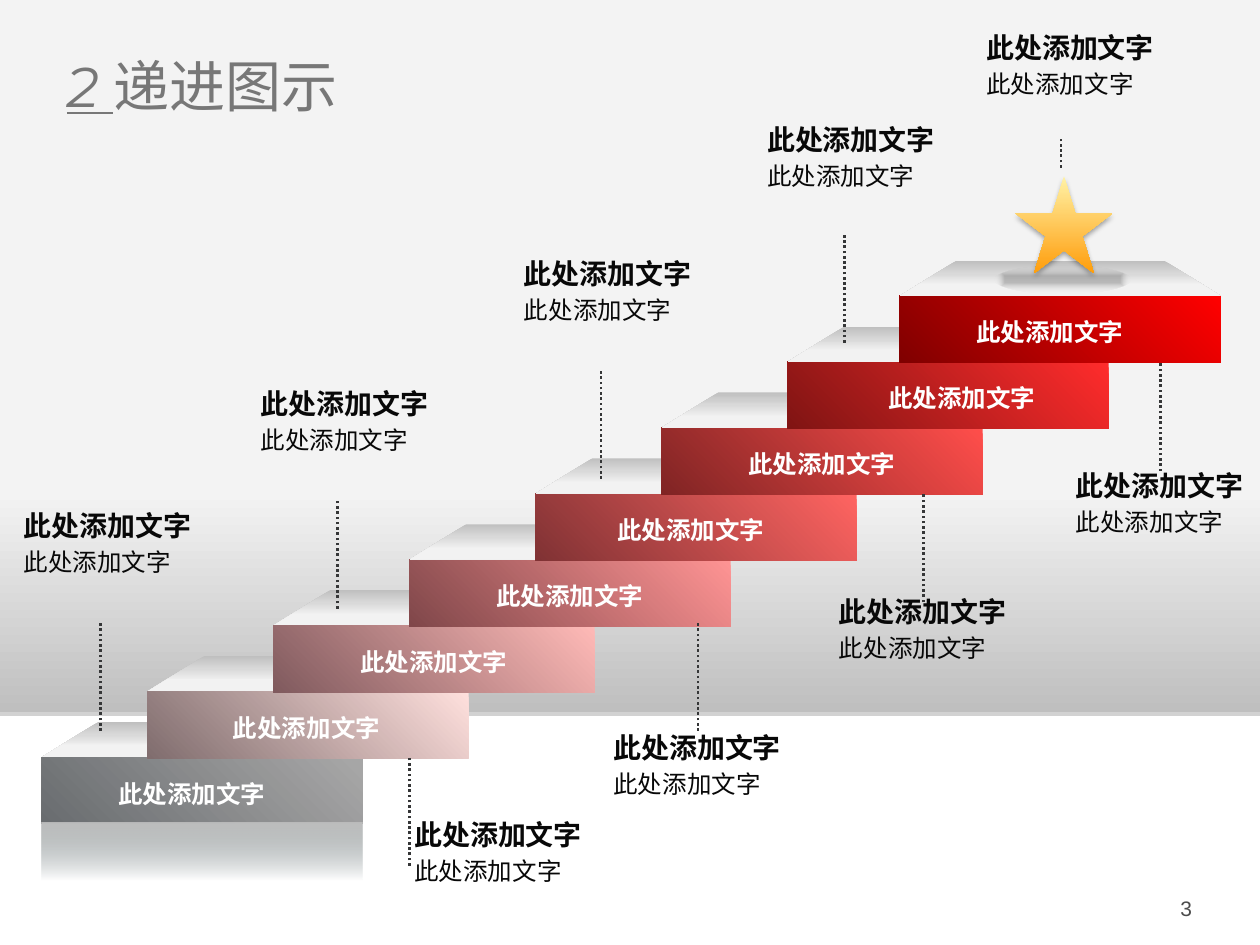
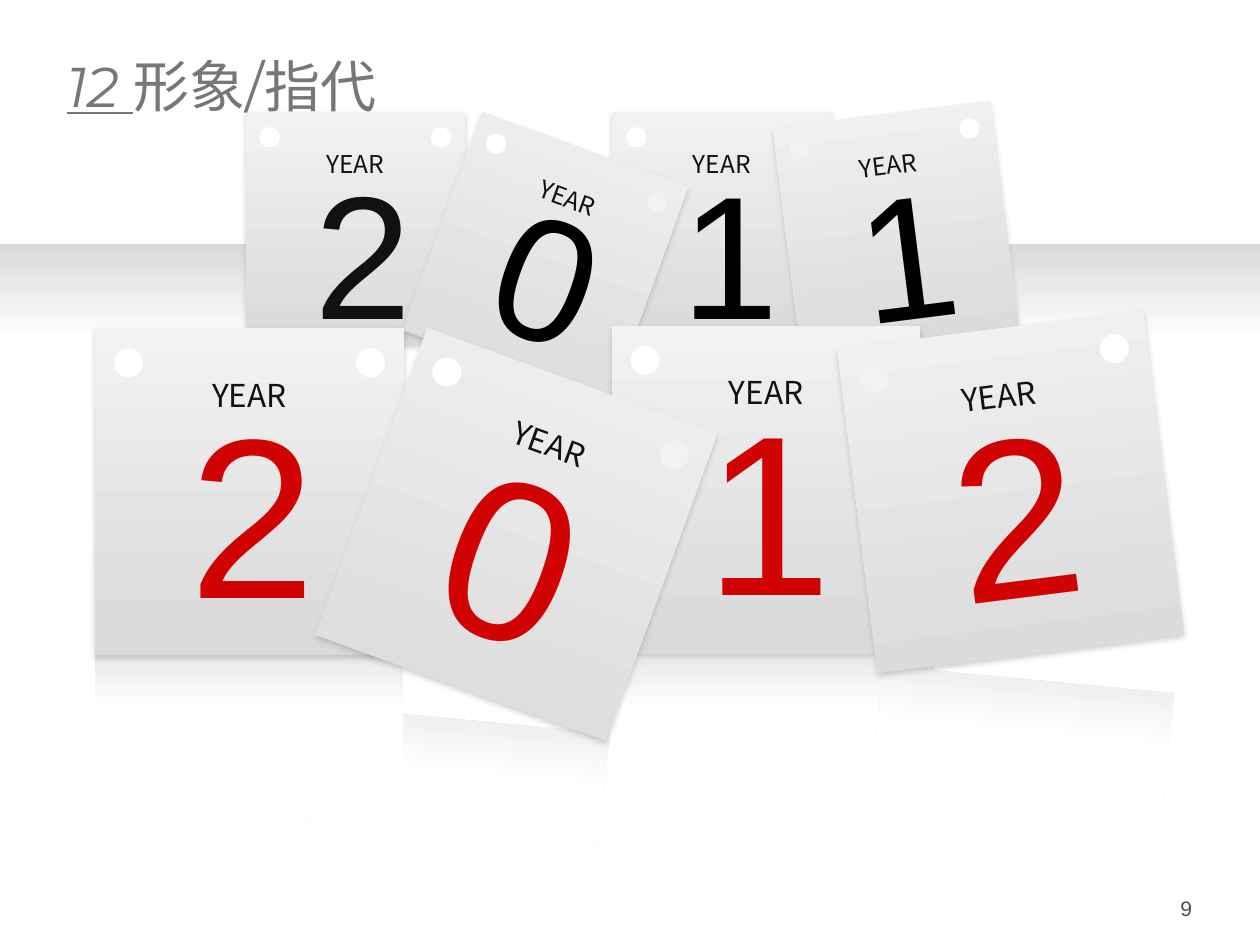
"""Build two diagram slides: a rising staircase and two rows of calendar cards."""
from math import cos, radians, sin

from lxml import etree
from pptx import Presentation
from pptx.dml.color import RGBColor
from pptx.enum.dml import MSO_LINE
from pptx.enum.shapes import MSO_CONNECTOR, MSO_SHAPE
from pptx.enum.text import MSO_ANCHOR, MSO_AUTO_SIZE, PP_ALIGN
from pptx.oxml import parse_xml
from pptx.oxml.ns import nsdecls, qn
from pptx.util import Inches, Pt

RECTANGLE = MSO_SHAPE.RECTANGLE
TRAPEZOID = MSO_SHAPE.TRAPEZOID
ELLIPSE = MSO_SHAPE.OVAL
STAR = MSO_SHAPE.STAR_5_POINT
STRAIGHT = MSO_CONNECTOR.STRAIGHT
DOTTED = MSO_LINE.ROUND_DOT
MIDDLE = MSO_ANCHOR.MIDDLE
TOP = MSO_ANCHOR.TOP
GROW = MSO_AUTO_SIZE.SHAPE_TO_FIT_TEXT
FIXED = MSO_AUTO_SIZE.NONE
LEFT, CENTER, RIGHT = PP_ALIGN.LEFT, PP_ALIGN.CENTER, PP_ALIGN.RIGHT

CJK_FONT, TITLE_FONT, DIGIT_FONT = "Noto Sans CJK SC", "Montserrat", "Arial"
WHITE = RGBColor(0xFF, 0xFF, 0xFF)
PALE = RGBColor(0xF2, 0xF2, 0xF2)
TITLE_GRAY = RGBColor(0x77, 0x77, 0x77)
NUMBER_GRAY = RGBColor(0x4C, 0x4C, 0x4C)
LEADER_GRAY = RGBColor(0x35, 0x36, 0x37)
INK = RGBColor(0x08, 0x08, 0x08)
YEAR_INK = RGBColor(0x11, 0x11, 0x11)
BLACK = RGBColor(0, 0, 0)
RED = RGBColor(0xD0, 0x02, 0x02)

BACKDROP = [(0, "F3F3F3"), (69, "F3F3F3"), (100, "BFBFBF")]
TREAD = [(0, "BFBFBF"), (37, "D9D9D9"), (69, "F2F2F2")]
STEP_REFLECTION = [(0, "BFBFBF"), (86, "627274", 0)]
STAR_SHADE = [(24, "000000", 22), (100, "FFFFFF", 0)]
STAR_GOLD = [(0, "FFF2A6"), (100, "FF9D0C")]
BAND = [(0, "D9D9D9"), (37, "FFFFFF"), (100, "FFFFFF")]
CARD = [(0, "F2F2F2"), (100, "D9D9D9")]
CARD_REFLECTION = [(0, "E8E8E8"), (49, "FFFFFF")]


def add_panel(page, kind, place, fill, angle=90, shadow=None, rotation=0):
    """Add a borderless shape; fill is a colour or a list of gradient stops, angle None is a glow."""
    shape = page.shapes.add_shape(kind, *map(Inches, place))
    shape.rotation = rotation
    shape.shadow.inherit = False
    shape.line.fill.background()
    properties = shape.element.spPr
    if isinstance(fill, RGBColor):
        shape.fill.solid()
        shape.fill.fore_color.rgb = fill
    else:
        shape.fill.background()
        stops = "".join(
            f'<a:gs pos="{position * 1000}"><a:srgbClr val="{color}">'
            f'<a:alpha val="{(alpha or [100])[0] * 1000}"/></a:srgbClr></a:gs>'
            for position, color, *alpha in fill
        )
        direction = f'<a:lin ang="{(angle or 0) * 60000}" scaled="0"/>'
        if angle is None:
            direction = ('<a:path path="shape"><a:fillToRect l="50000" t="50000" '
                         'r="50000" b="50000"/></a:path>')
        gradient = parse_xml(f'<a:gradFill {nsdecls("a")} rotWithShape="1">'
                             f'<a:gsLst>{stops}</a:gsLst>{direction}</a:gradFill>')
        properties.replace(properties.find(qn("a:noFill")), gradient)
    if shadow:
        color, alpha, blur, distance = shadow
        properties.find(qn("a:effectLst")).append(parse_xml(
            f'<a:outerShdw {nsdecls("a")} blurRad="{Pt(blur)}" dist="{Pt(distance)}" '
            f'dir="5400000" algn="t" rotWithShape="0"><a:srgbClr val="{color}">'
            f'<a:alpha val="{alpha * 1000}"/></a:srgbClr></a:outerShdw>'))
    return shape


def write_text(box, text, *, size, color, font=CJK_FONT, bold=False, italic=False,
               underline=False, align=LEFT, anchor=TOP, fit=GROW, before=0, same_line=False):
    """Write one formatted span, in a new paragraph unless same_line is set."""
    frame = box.text_frame
    frame.word_wrap = True
    frame.auto_size = fit
    frame.vertical_anchor = anchor
    para = frame.paragraphs[-1]
    if para.runs and not same_line:
        para = frame.add_paragraph()
    para.alignment = align
    if before:
        para.space_before = Pt(0)
        spacing = para._p.pPr.find(qn("a:spcBef"))
        spacing.remove(spacing[0])
        etree.SubElement(spacing, qn("a:spcPct")).set("val", str(before * 1000))
    span = para.add_run()
    span.text = text
    span.font.size = Pt(size)
    span.font.color.rgb = color
    span.font.bold = bold
    span.font.italic = italic
    span.font.underline = underline
    span.font.name = font
    etree.SubElement(span.font._element, qn("a:ea")).set("typeface", CJK_FONT)


deck = Presentation()
deck.slide_width, deck.slide_height = Inches(10), Inches(7.5)
title_only = deck.slide_layouts[5]
stairs_page = deck.slides.add_slide(title_only)
cards_page = deck.slides.add_slide(title_only)

add_panel(stairs_page, RECTANGLE, (0, 0, 10, 5.65), BACKDROP, shadow=("808080", 35, 0, 1.8))

STEP_WIDTH, STEP_HEIGHT, TREAD_HEIGHT, STEP_RISE = 2.55, 0.53, 0.28, 0.523
steps = [
    (0.33, 0.84, [(0, "A6A6A6"), (3, "A6A6A6"), (100, "696C6F")]),
    (1.17, 1.75, [(0, "FFE0DD"), (100, "806D6E")]),
    (2.17, 2.76, [(0, "FFBAB7"), (100, "805A5E")]),
    (3.25, 3.84, [(0, "FF9494"), (100, "80474A")]),
    (4.25, 4.8, [(0, "FF6461"), (100, "803234")]),
    (5.25, 5.84, [(0, "FF4E4B"), (100, "802424")]),
    (6.25, 6.95, [(0, "FF2C2C"), (100, "801413")]),
    (7.14, 7.65, [(0, "FF0000"), (100, "800000")]),
]
for index, (left, label_left, colors) in enumerate(steps):
    top = 6.01 - index * STEP_RISE
    add_panel(stairs_page, RECTANGLE, (left, top, STEP_WIDTH, STEP_HEIGHT), colors, angle=135)
    tread = add_panel(stairs_page, TRAPEZOID,
                      (left, top - TREAD_HEIGHT, STEP_WIDTH, TREAD_HEIGHT), TREAD)
    tread.adjustments[0] = 1.61
    label = stairs_page.shapes.add_textbox(
        Inches(label_left), Inches(top + 0.12), Inches(1.87), Inches(0.34))
    write_text(label, "此处添加文字", size=14, color=WHITE, bold=True)

add_panel(stairs_page, RECTANGLE, (0.33, 6.53, STEP_WIDTH, STEP_HEIGHT), STEP_REFLECTION)
add_panel(stairs_page, ELLIPSE, (7.89, 2.11, 1.08, 0.22), STAR_SHADE, angle=None)
add_panel(stairs_page, STAR, (8.06, 1.4, 0.77, 0.77), STAR_GOLD, shadow=("000000", 35, 3.1, 1.8))

callouts = [
    (0.09, 3.99, 0.8, 4.94, 5.8),
    (1.97, 3.02, 2.68, 3.96, 4.83),
    (4.06, 1.99, 4.77, 2.93, 3.8),
    (5.99, 0.92, 6.7, 1.86, 2.72),
    (7.73, 0.19, 8.42, 1.08, 1.33),
    (3.19, 6.44, 3.25, 6.01, 6.87),
    (4.77, 5.75, 5.54, 4.94, 5.8),
    (6.56, 4.67, 7.33, 3.91, 4.78),
    (8.44, 3.67, 9.21, 2.88, 3.74),
]
for left, top, leader_x, leader_top, leader_bottom in callouts:
    leader = stairs_page.shapes.add_connector(
        STRAIGHT, Inches(leader_x), Inches(leader_bottom), Inches(leader_x), Inches(leader_top))
    leader.line.color.rgb = LEADER_GRAY
    leader.line.width = Pt(1.5)
    leader.line.dash_style = DOTTED
    etree.SubElement(leader.element.spPr, qn("a:effectLst"))
    callout = stairs_page.shapes.add_textbox(
        Inches(left), Inches(top), Inches(1.58), Inches(0.65))
    write_text(callout, "此处添加文字", size=16, color=INK, bold=True, before=20)
    write_text(callout, "此处添加文字", size=14, color=INK, before=20)

add_panel(cards_page, RECTANGLE, (0, 1.94, 10, 2.03), BAND)
for left, top, width, tilt in [(2.48, 5.71, 2.32, 5.4), (4.96, 5.19, 2.45, 0),
                               (6.96, 5.39, 2.32, 5.4), (0.75, 5.19, 2.45, 0)]:
    add_panel(cards_page, RECTANGLE, (left, top, width, 0.91), CARD_REFLECTION, rotation=tilt)

back_row = {
    "card": (1.74, 1.84), "digit": (0.76, 1.78, 100), "year": (0.34, 14, -0.51),
    "hole": (0.16, 0.68, -0.72),
    "cards": [("1", 5.73, 1.81, 0, 0.18, BLACK), ("2", 2.82, 1.81, 0, 0.18, YEAR_INK),
              ("0", 4.33, 2.05, 20, 0.1, BLACK), ("1", 7.11, 1.82, -7.2, 0.18, BLACK)],
}
front_row = {
    "card": (2.45, 2.59), "digit": (1.07, 2.29, 130), "year": (0.41, 18, -0.76),
    "hole": (0.23, 0.96, -1.02),
    "cards": [("1", 6.08, 3.88, 0, 0.14, RED), ("2", 1.98, 3.9, 0, 0.14, RED),
              ("0", 4.1, 4.24, 20, 0.14, RED), ("2", 8.02, 3.9, -7.2, 0.14, RED)],
}
for row in (back_row, front_row):
    card_width, card_height = row["card"]
    digit_width, digit_height, digit_size = row["digit"]
    year_height, year_size, year_y = row["year"]
    hole_size, hole_x, hole_y = row["hole"]
    for digit, center_x, center_y, tilt, digit_y, digit_color in row["cards"]:
        parts = [
            ("card", 0, 0, card_width, card_height),
            ("digit", -0.04, digit_y, digit_width, digit_height),
            ("left hole", -hole_x, hole_y, hole_size, hole_size),
            ("right hole", hole_x, hole_y, hole_size, hole_size),
            ("year", 0, year_y, card_width, year_height),
        ]
        turn = radians(tilt)
        for part, x, y, width, height in parts:
            place = (center_x + x * cos(turn) - y * sin(turn) - width / 2,
                     center_y + x * sin(turn) + y * cos(turn) - height / 2, width, height)
            if part == "card":
                add_panel(cards_page, RECTANGLE, place, CARD,
                          shadow=("808080", 35, 3.1, 1.8), rotation=tilt)
            elif part.endswith("hole"):
                shaded = tilt * x > 0
                add_panel(cards_page, ELLIPSE, place, PALE if shaded else WHITE, rotation=tilt)
            else:
                box = cards_page.shapes.add_textbox(*map(Inches, place))
                box.rotation = tilt
                if part == "digit":
                    write_text(box, digit, size=digit_size, color=digit_color, font=DIGIT_FONT)
                else:
                    write_text(box, "YEAR", size=year_size, color=YEAR_INK, align=CENTER)

for page, section, heading, number in [(stairs_page, "2 ", "递进图示", "3"),
                                       (cards_page, "12 ", "形象/指代", "9")]:
    title = page.shapes.title
    title.left, title.top, title.width, title.height = map(Inches, (0.43, 0.28, 9.14, 0.79))
    title_format = {"size": 32, "color": TITLE_GRAY, "font": TITLE_FONT,
                    "anchor": MIDDLE, "fit": FIXED}
    write_text(title, section, italic=True, underline=True, **title_format)
    write_text(title, heading, same_line=True, **title_format)
    title.element.getparent().append(title.element)
    page_number = page.shapes.add_textbox(Inches(7.23), Inches(7.06), Inches(2.33), Inches(0.29))
    write_text(page_number, number, size=12, color=NUMBER_GRAY, font=DIGIT_FONT,
               align=RIGHT, anchor=MIDDLE, fit=FIXED)

deck.save("out.pptx")
